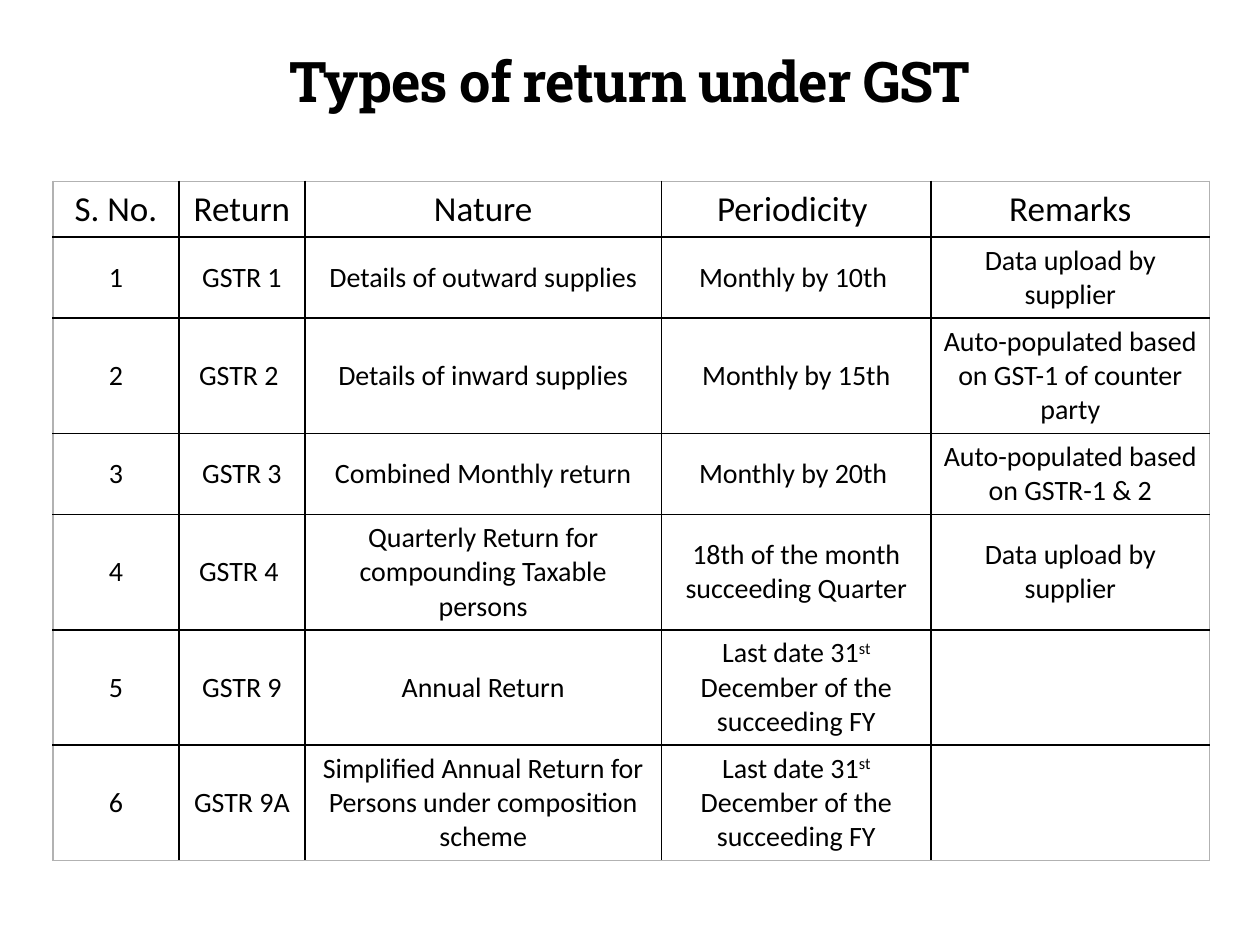
from lxml import etree
from pptx import Presentation
from pptx.dml.color import RGBColor
from pptx.enum.text import MSO_ANCHOR, PP_ALIGN
from pptx.oxml.ns import qn
from pptx.util import Inches, Pt

CENTER = PP_ALIGN.CENTER
TOP, MIDDLE = MSO_ANCHOR.TOP, MSO_ANCHOR.MIDDLE
TITLE_ONLY = 5
WIDTH, HEIGHT = 10, 7.5

COLUMNS = [1, 1, 2.83, 2.14, 2.21]
ROW_HEIGHT = 0.41
YEAR_END = [("Last date 31", 0), ("st", 30), (" December of the succeeding FY", 0)]
ROWS = [
    ["S. No.", "Return ", "Nature", "Periodicity ", "Remarks"],
    ["1", "GSTR 1", "Details of outward supplies", "Monthly by 10th ",
     "Data upload by supplier"],
    ["2", "GSTR 2 ", "Details of inward supplies", "Monthly by 15th",
     "Auto-populated based on GST-1 of counter party"],
    ["3", "GSTR 3", "Combined Monthly return", "Monthly by 20th ",
     "Auto-populated based on GSTR-1 & 2"],
    ["4", "GSTR 4 ", "Quarterly Return for compounding Taxable persons",
     "18th of the month succeeding Quarter", "Data upload by supplier"],
    ["5", "GSTR 9", "Annual Return", YEAR_END, ""],
    ["6", "GSTR 9A", "Simplified Annual Return for Persons under composition scheme",
     YEAR_END, ""],
]


def color(value):
    return RGBColor.from_string(value)


class SlideBuilder:
    heading_font, body_font = "Roboto Slab", "Calibri"
    ink, frame_color = "000000", "B2B2B2"
    title_size, header_size, body_size = 32, 20, 16

    def __init__(self, deck):
        self.deck = deck
        self.slide = deck.slides.add_slide(deck.slide_layouts[TITLE_ONLY])

    def area(self, left, top, width, height):
        """Turn shares of the slide into lengths."""
        across, down = self.deck.slide_width, self.deck.slide_height
        return (int(left * across), int(top * down),
                int(width * across), int(height * down))

    def add_span(self, para, text, font, size, bold=False):
        span = para.add_run()
        span.text = text
        span.font.name, span.font.size, span.font.bold = font, Pt(size), bold
        span.font.color.rgb = color(self.ink)
        return span

    def title(self, text, *shares):
        box = self.slide.shapes.title
        box.left, box.top, box.width, box.height = self.area(*shares)
        box.text_frame.vertical_anchor = MIDDLE
        para = box.text_frame.paragraphs[0]
        para.alignment = CENTER
        span = self.add_span(para, text, self.heading_font, self.title_size, True)
        span.font._element.set("spc", "-60")

    def borders(self, cell, edges):
        props = cell._tc.get_or_add_tcPr()
        # Border lines come before the fill in the cell properties
        for index, (side, on_frame) in enumerate(edges.items()):
            line = etree.Element(qn(f"a:ln{side}"), w=str(Pt(1)))
            fill = etree.SubElement(line, qn("a:solidFill"))
            etree.SubElement(fill, qn("a:srgbClr"),
                             val=self.frame_color if on_frame else self.ink)
            props.insert(index, line)

    def cell(self, cell, content, size, anchor):
        cell.fill.background()
        cell.vertical_anchor = anchor
        para = cell.text_frame.paragraphs[0]
        para.alignment = CENTER
        parts = [(content, 0)] if isinstance(content, str) else content
        for text, baseline in parts:
            if text:
                span = self.add_span(para, text, self.body_font, size)
                if baseline:
                    span.font._element.set("baseline", str(baseline * 1000))

    def table(self, rows, columns, row_height, *shares):
        frame = self.slide.shapes.add_table(len(rows), len(columns), *self.area(*shares))
        table = frame.table
        table.first_row = table.horz_banding = False
        for column, width in zip(table.columns, columns):
            column.width = Inches(width)
        for row in table.rows:
            row.height = Inches(row_height)
        frame.height = self.area(*shares)[3]
        last_row, last_column = len(rows) - 1, len(columns) - 1
        for r, row in enumerate(rows):
            size, anchor = (self.body_size, MIDDLE) if r else (self.header_size, TOP)
            for c, content in enumerate(row):
                cell = table.cell(r, c)
                self.cell(cell, content, size, anchor)
                self.borders(cell, {"L": c == 0, "R": c == last_column,
                                    "T": r == 0, "B": r == last_row})


def main():
    deck = Presentation()
    deck.slide_width, deck.slide_height = Inches(WIDTH), Inches(HEIGHT)
    page = SlideBuilder(deck)

    # Heading
    page.title("Types of return under GST", 0.02, 0.05, 0.96, 0.07)

    # Table of returns
    page.table(ROWS, COLUMNS, ROW_HEIGHT,
               0.42 / WIDTH, 1.44 / HEIGHT, sum(COLUMNS) / WIDTH, 5.3 / HEIGHT)

    deck.save("out.pptx")


if __name__ == "__main__":
    main()
